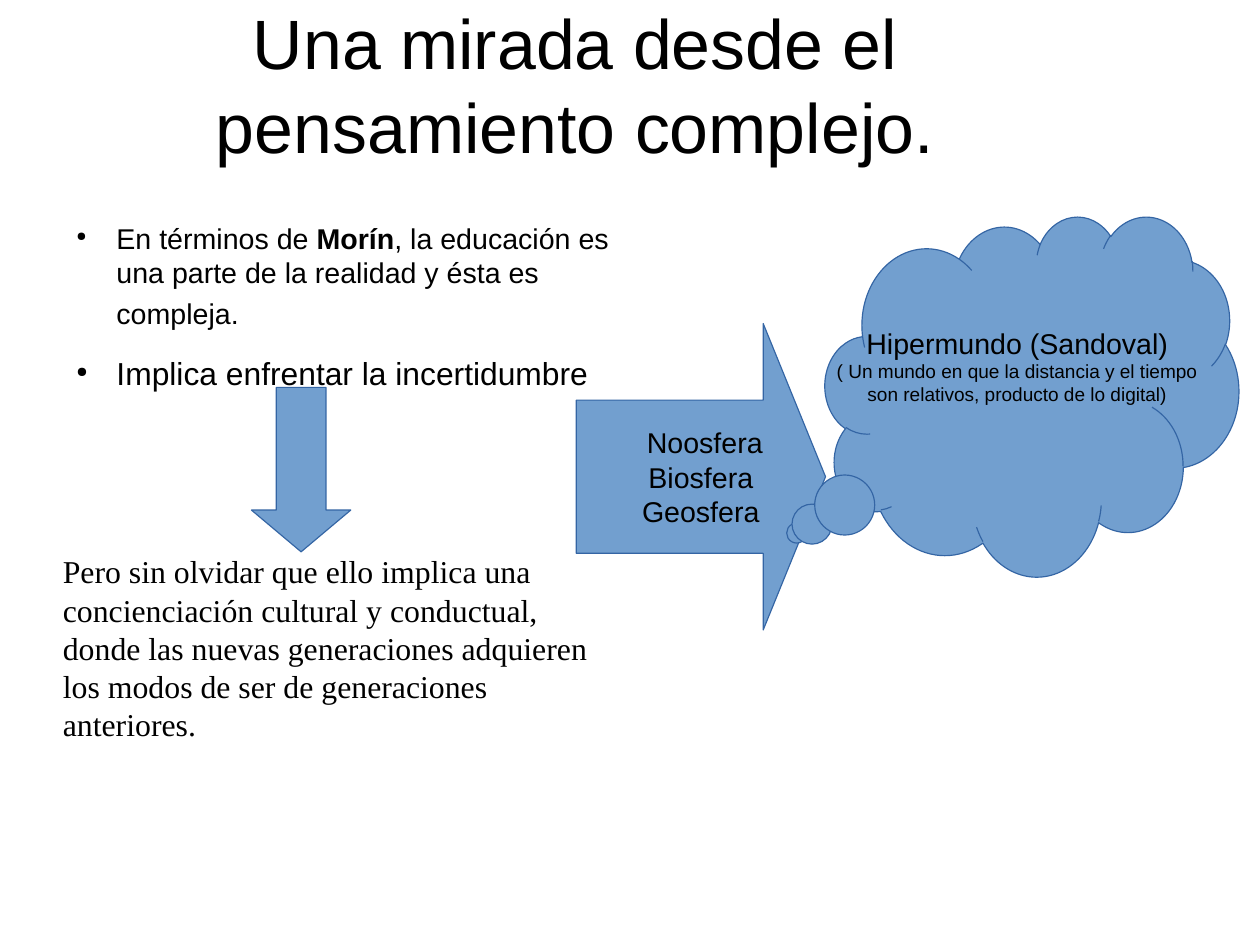
from lxml import etree
from pptx import Presentation
from pptx.dml.color import RGBColor
from pptx.enum.shapes import MSO_SHAPE
from pptx.enum.text import MSO_ANCHOR, PP_ALIGN
from pptx.oxml.ns import qn
from pptx.util import Pt

CENTER = PP_ALIGN.CENTER
MIDDLE = MSO_ANCHOR.MIDDLE
DOWN_ARROW = MSO_SHAPE.DOWN_ARROW
RIGHT_ARROW = MSO_SHAPE.RIGHT_ARROW
CLOUD = MSO_SHAPE.CLOUD_CALLOUT
COLORS = {"text": "000000", "fill": "729FCF", "line": "3465A4"}


def set_font(font, size, name="Arial"):
    font.size = Pt(size)
    font.name = name
    font.color.rgb = RGBColor.from_string(COLORS["text"])


def add_text_area(left, top, width, height):
    frame = slide.shapes.add_textbox(Pt(left), Pt(top), Pt(width), Pt(height)).text_frame
    frame.word_wrap = True
    frame.margin_left = frame.margin_top = frame.margin_right = frame.margin_bottom = 0
    return frame


prs = Presentation()
prs.slide_width, prs.slide_height = Pt(793.7), Pt(595.3)
slide = prs.slides.add_slide(prs.slide_layouts[6])

title = add_text_area(39.6, 3.6, 645.8, 98.6)
title.vertical_anchor = MIDDLE
heading = title.paragraphs[0]
heading.text = "Una mirada desde el pensamiento complejo."
heading.alignment = CENTER
set_font(heading.font, 44)

ideas = add_text_area(39.6, 139, 348.5, 190)
morin = ideas.paragraphs[0]
uncertainty = ideas.add_paragraph()
uncertainty.space_before = Pt(14.2)
for idea, size in ((morin, 18), (uncertainty, 20)):
    props = idea._p.get_or_add_pPr()
    props.set("marL", str(Pt(33.8)))
    props.set("indent", str(-Pt(25.2)))
    etree.SubElement(props, qn("a:buSzPct"), val="45000")
    etree.SubElement(props, qn("a:buChar"), char="●")
    set_font(idea.font, size)
for words, bold, size in (
    ("En términos de", False, 18),
    (" Morín", True, 18),
    (", la educación es una parte de la realidad y ésta es compleja.", False, 18),
    (" ", False, 22),
):
    run = morin.add_run()
    run.text = words
    run.font.bold = bold
    set_font(run.font, size)
uncertainty.text = "Implica enfrentar la incertidumbre"

awareness = add_text_area(39.6, 347.8, 348.5, 190).paragraphs[0]
awareness.text = (
    "Pero sin olvidar que ello implica una concienciación cultural y conductual, "
    "donde las nuevas generaciones adquieren los modos de ser de generaciones anteriores."
)
set_font(awareness.font, 20, "Times New Roman")

spheres = ((" Noosfera", 18), ("Biosfera", 18), ("Geosfera", 18))
hyperworld = (
    ("Hipermundo (Sandoval)", 18),
    ("( Un mundo en que la distancia y el tiempo", 12),
    ("son relativos, producto de lo digital)", 12),
)
for kind, box, adjustments, lines, left_inset, bottom_inset in (
    (DOWN_ARROW, (158.4, 244, 62.6, 103.6), (0.5, 0.42), (), 7.2, 3.6),
    (RIGHT_ARROW, (363, 203.8, 157, 193), (0.5, 0.25), spheres, 26.6, 3.6),
    (CLOUD, (519.8, 136, 260.6, 226.8), (-0.569, 0.381), hyperworld, 7.2, 31.2),
):
    shape = slide.shapes.add_shape(kind, *map(Pt, box))
    shape.shadow.inherit = False
    for index, value in enumerate(adjustments):
        shape.adjustments[index] = value
    shape.fill.solid()
    shape.fill.fore_color.rgb = RGBColor.from_string(COLORS["fill"])
    shape.line.color.rgb = RGBColor.from_string(COLORS["line"])
    shape.line.width = Pt(0.75)
    frame = shape.text_frame
    frame.word_wrap = False
    frame.vertical_anchor = MIDDLE
    frame.margin_left, frame.margin_bottom = Pt(left_inset), Pt(bottom_inset)
    for index, (words, size) in enumerate(lines):
        paragraph = frame.add_paragraph() if index else frame.paragraphs[0]
        paragraph.text = words
        paragraph.alignment = CENTER
        set_font(paragraph.font, size)

prs.save("out.pptx")
